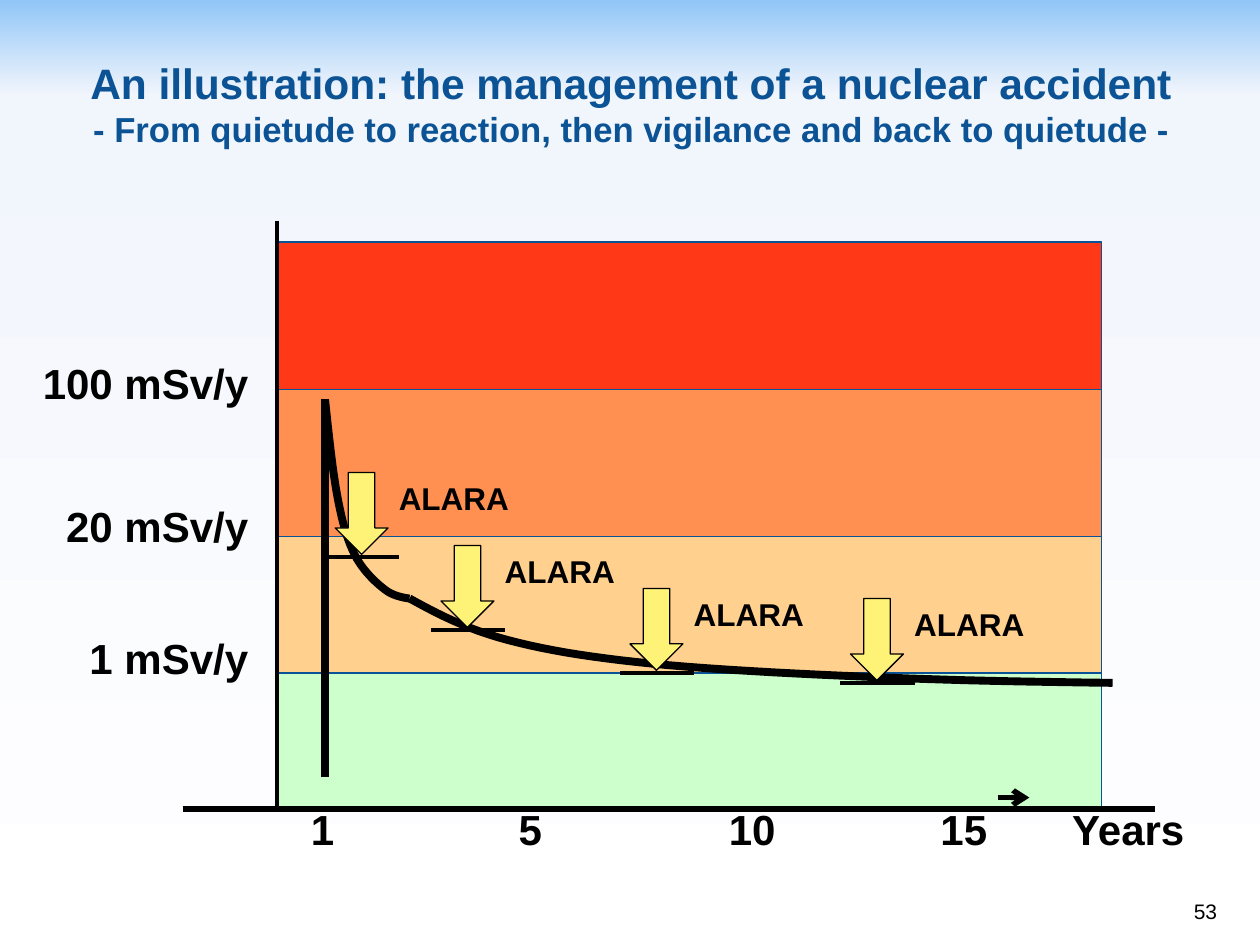
from copy import deepcopy

from lxml import etree
from pptx import Presentation
from pptx.dml.color import RGBColor
from pptx.enum.shapes import MSO_CONNECTOR, MSO_SHAPE
from pptx.enum.text import MSO_ANCHOR, PP_ALIGN
from pptx.oxml.ns import qn
from pptx.util import Inches, Pt

STRAIGHT = MSO_CONNECTOR.STRAIGHT
RECTANGLE, DOWN_ARROW = MSO_SHAPE.RECTANGLE, MSO_SHAPE.DOWN_ARROW
TOP, MIDDLE, BOTTOM = MSO_ANCHOR.TOP, MSO_ANCHOR.MIDDLE, MSO_ANCHOR.BOTTOM
LEFT, CENTER, RIGHT = PP_ALIGN.LEFT, PP_ALIGN.CENTER, PP_ALIGN.RIGHT

FONT = "Arial"
COLORS = {
    "sky": "91C6F7", "haze": "F1F5FC", "white": "FFFFFF", "black": "000000",
    "title": "0B5394", "band_line": "095295", "arrow": "FFF377",
    "red": "FF3818", "orange": "FF9052", "sand": "FFD08E", "green": "CCFFCC",
}
BANDS = [("red", 1.17), ("orange", 1.17), ("sand", 1.08), ("green", 1.08)]
DOSE_LABELS = [("100 mSv/y", 0.87), ("20 mSv/y", 2.0), ("1 mSv/y", 3.05)]
YEAR_TABS = [0.31, 1.96, 3.72, 5.4]
ALARA_STEPS = [(2.58, 3.75), (3.42, 4.33), (4.92, 4.67), (6.67, 4.75)]
EARLY_CURVE = [
    (2.58, 3.17), (2.61, 3.45), (2.64, 3.74), (2.68, 3.95), (2.72, 4.16),
    (2.76, 4.3), (2.83, 4.43), (2.9, 4.55), (3, 4.64), (3.07, 4.69),
    (3.14, 4.74), (3.25, 4.75), (3.25, 4.75),
]
LATE_CURVE = [
    (3.25, 4.75), (3.47, 4.87), (3.69, 4.99), (4.03, 5.08), (4.37, 5.17),
    (4.76, 5.23), (5.31, 5.28), (5.87, 5.33), (6.77, 5.37), (7.36, 5.39),
    (7.94, 5.41), (8.83, 5.42), (8.83, 5.42),
]


def rgb(name):
    """Return the named colour."""
    return RGBColor.from_string(COLORS[name])


def add_run(paragraph, text, size, color="black", bold=True):
    """Add one formatted run to a paragraph."""
    run = paragraph.add_run()
    run.text = text
    run.font.name, run.font.size, run.font.bold = FONT, Pt(size), bold
    run.font.color.rgb = rgb(color)


def add_label(slide, box, text, size, alignment, anchor=TOP, bold=True):
    """Add a one-line label and return its paragraph."""
    frame = slide.shapes.add_textbox(*map(Inches, box)).text_frame
    frame.word_wrap = True
    frame.vertical_anchor = anchor
    frame.margin_left, frame.margin_right = 0, Inches(0.02)
    paragraph = frame.paragraphs[0]
    paragraph.alignment = alignment
    add_run(paragraph, text, size, bold=bold)
    return paragraph


def add_line(slide, start, end, width):
    """Add a straight black line without shadow."""
    line = slide.shapes.add_connector(STRAIGHT, *map(Inches, (*start, *end)))
    line.line.color.rgb = rgb("black")
    line.line.width = Pt(width)
    etree.SubElement(line._element.spPr, qn("a:effectLst"))
    return line


def add_block(slide, kind, box, fill, outline):
    """Add a filled preset shape with a thin outline."""
    shape = slide.shapes.add_shape(kind, *map(Inches, box))
    shape.shadow.inherit = False
    shape.fill.solid()
    shape.fill.fore_color.rgb = rgb(fill)
    shape.line.color.rgb = rgb(outline)
    shape.line.width = Pt(0.75)


def add_curve(slide, controls, steps=12):
    """Draw a chain of cubic Bezier segments as a fine open outline."""
    points = []
    for first in range(0, len(controls) - 1, 3):
        segment = controls[first:first + 4]
        for step in range(1, steps + 1):
            t = step / steps
            weights = ((1 - t) ** 3, 3 * t * (1 - t) ** 2, 3 * t * t * (1 - t), t ** 3)
            points.append(tuple(
                Inches(sum(w * point[axis] for w, point in zip(weights, segment)))
                for axis in (0, 1)))
    builder = slide.shapes.build_freeform(*map(Inches, controls[0]))
    builder.add_line_segments(points, close=False)
    curve = builder.convert_to_shape()
    curve.shadow.inherit = False
    curve.fill.background()
    curve.line.color.rgb = rgb("black")
    curve.line.width = Pt(4.5)


def paint_background(slide):
    """Fill the background with a three-stop vertical gradient."""
    fill = slide.background.fill
    fill.gradient()
    fill.gradient_angle = 270
    stop_list = slide._element.find(".//" + qn("a:gsLst"))
    stop_list.append(deepcopy(stop_list[-1]))
    stops = zip(fill.gradient_stops, ("sky", "haze", "white"), (0, 0.1, 1))
    for stop, color, position in stops:
        stop.color.rgb = rgb(color)
        stop.position = position


def place_title(slide, left, top, width, height):
    """Place the two-line title in its placeholder."""
    title = slide.shapes.title
    title.left, title.top, title.width, title.height = map(
        Inches, (left, top, width, height))
    frame = title.text_frame
    frame.word_wrap = True
    frame.vertical_anchor = MIDDLE
    frame.margin_left = frame.margin_right = frame.margin_bottom = 0
    paragraph = frame.paragraphs[0]
    paragraph.alignment = CENTER
    add_run(paragraph, "An illustration: the management of a nuclear accident",
            24.3, "title")
    paragraph.add_line_break()
    add_run(paragraph, "- From quietude to reaction, then vigilance and back to quietude -",
            19.8, "title")


def place_dose_bands(slide, left, top, width):
    """Stack the dose bands and add the vertical axis with its labels."""
    band_top = top
    for color, height in BANDS:
        add_block(slide, RECTANGLE, (left, band_top, width, height), color, "band_line")
        band_top += height
    add_line(slide, (left, top - 0.17), (left, band_top + 0.02), 2)
    for text, offset in DOSE_LABELS:
        add_label(slide, (left - 2, top + offset, 1.79, 0.57), text, 24, RIGHT)


def place_time_axis(slide, left, top, width):
    """Draw the time axis with its year labels and small arrow."""
    add_line(slide, (left, top), (left + width, top), 3)
    label_top = top - 0.09
    add_label(slide, (left + 6.63, label_top, 1.77, 0.5), "Years", 24, CENTER)
    arrow = add_line(slide, (left + 6.47, label_top), (left + 6.72, label_top), 3)
    etree.SubElement(arrow.line._get_or_add_ln(), qn("a:tailEnd"), type="arrow")
    years = add_label(slide, (left + 0.8, label_top, 5.83, 0.5),
                      "\t1\t5\t10\t15", 24, LEFT)
    tab_list = etree.SubElement(years._p.get_or_add_pPr(), qn("a:tabLst"))
    for position in YEAR_TABS:
        etree.SubElement(tab_list, qn("a:tab"), pos=str(Inches(position)), algn="ctr")


def place_alara_step(slide, left, top):
    """Place one ALARA arrow with its target line and label."""
    add_block(slide, DOWN_ARROW, (left + 0.08, top, 0.42, 0.65), "arrow", "black")
    add_line(slide, (left, top + 0.67), (left + 0.59, top + 0.67), 2)
    add_label(slide, (left + 0.48, top, 1, 0.46), "ALARA", 18, RIGHT)


def main():
    """Build and save the slide."""
    presentation = Presentation()
    presentation.slide_width, presentation.slide_height = Inches(10), Inches(7.5)
    slide = presentation.slides.add_slide(presentation.slide_layouts[5])
    paint_background(slide)
    place_title(slide, 0.01, 0.21, 10, 1.17)
    add_label(slide, (7.68, 6.88, 2, 0.5), "53", 12, RIGHT, BOTTOM, bold=False)
    place_dose_bands(slide, 2.2, 1.92, 6.54)
    place_time_axis(slide, 1.45, 6.42, 7.72)
    add_line(slide, (2.58, 6.17), (2.58, 3.17), 4.5)
    add_curve(slide, EARLY_CURVE)
    add_curve(slide, LATE_CURVE)
    for left, top in ALARA_STEPS:
        place_alara_step(slide, left, top)
    presentation.save("out.pptx")


if __name__ == "__main__":
    main()
